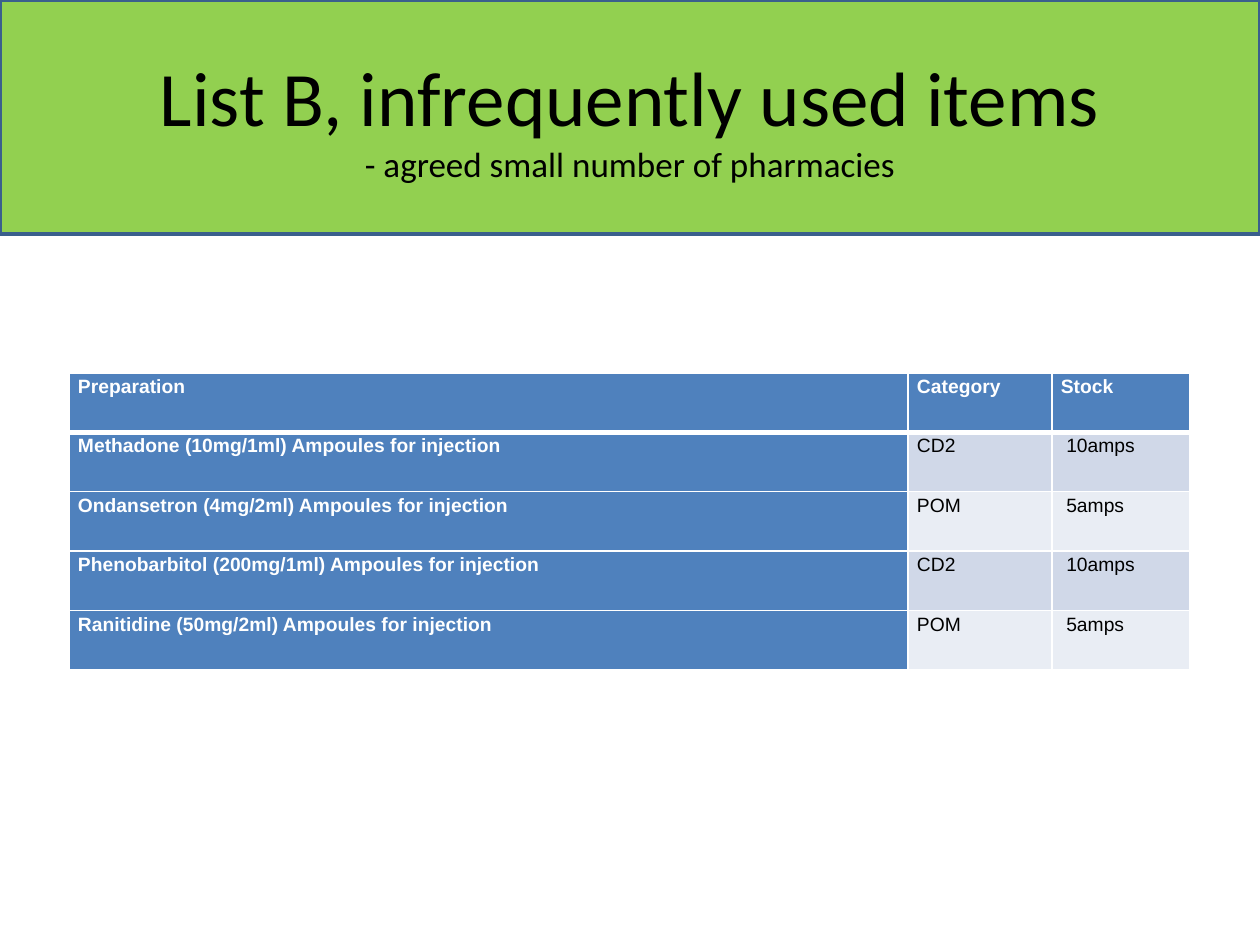
from dataclasses import dataclass

from lxml.etree import SubElement
from pptx import Presentation
from pptx.dml.color import RGBColor
from pptx.enum.text import MSO_ANCHOR, MSO_AUTO_SIZE, PP_ALIGN
from pptx.oxml.ns import qn
from pptx.util import Emu, Pt

EMU_PER_PX = 914400 / 126
TITLE_ONLY = 5


@dataclass(frozen=True)
class Theme:
    banner: str = "92D050"
    banner_line: str = "3A5F8C"
    heading: str = "4F81BD"
    bands: tuple = ("D0D8E8", "E9EDF4")
    light: str = "FFFFFF"
    dark: str = "000000"
    title_font: str = "Calibri"
    table_font: str = "Arial"
    title_size: int = 44
    subtitle_size: int = 20
    table_size: int = 11
    border: int = 1
    header_border: int = 3


THEME = Theme()

COLUMN_WIDTHS = (839, 144, 138)
ROWS = (
    ("Preparation", "Category", "Stock"),
    ("Methadone (10mg/1ml) Ampoules for injection", "CD2", " 10amps"),
    ("Ondansetron (4mg/2ml) Ampoules for injection", "POM", " 5amps"),
    ("Phenobarbitol (200mg/1ml) Ampoules for injection", "CD2", " 10amps"),
    ("Ranitidine (50mg/2ml) Ampoules for injection", "POM", " 5amps"),
)


def px(length):
    return Emu(round(length * EMU_PER_PX))


def write_text(paragraph, text, *, font, size, color, bold=False,
               align=PP_ALIGN.LEFT, line_spacing=1.0):
    paragraph.alignment = align
    paragraph.line_spacing = line_spacing
    run = paragraph.add_run()
    run.text = text
    run.font.name = font
    run.font.size = Pt(size)
    run.font.bold = bold
    run.font.color.rgb = RGBColor.from_string(color)


def fill_solid(target, color):
    target.fill.solid()
    target.fill.fore_color.rgb = RGBColor.from_string(color)


def add_banner(slide, title, subtitle):
    banner = slide.shapes.title
    banner.left, banner.top = px(0), px(0)
    banner.width, banner.height = px(1260), px(234)
    fill_solid(banner, THEME.banner)
    banner.line.color.rgb = RGBColor.from_string(THEME.banner_line)
    banner.line.width = Pt(2)
    frame = banner.text_frame
    frame.auto_size = MSO_AUTO_SIZE.NONE
    frame.vertical_anchor = MSO_ANCHOR.MIDDLE
    style = dict(font=THEME.title_font, color=THEME.dark, align=PP_ALIGN.CENTER)
    write_text(frame.paragraphs[0], title, size=THEME.title_size, **style)
    write_text(frame.add_paragraph(), subtitle, size=THEME.subtitle_size, **style)


def set_borders(cell, row_index):
    """Draw all four sides, thicker between the header and the first row."""
    widths = dict.fromkeys(("lnL", "lnR", "lnT", "lnB"), THEME.border)
    if row_index == 0:
        widths["lnB"] = THEME.header_border
    elif row_index == 1:
        widths["lnT"] = THEME.header_border
    properties = cell._tc.get_or_add_tcPr()
    for side, width in widths.items():
        line = SubElement(properties, qn(f"a:{side}"), w=str(Pt(width)))
        solid = SubElement(line, qn("a:solidFill"))
        SubElement(solid, qn("a:srgbClr"), val=THEME.light)


def format_cell(cell, text, row_index, column_index):
    is_heading = row_index == 0 or column_index == 0
    cell.margin_left = cell.margin_right = px(9)
    cell.margin_top = cell.margin_bottom = 0
    set_borders(cell, row_index)
    band = THEME.bands[(row_index - 1) % len(THEME.bands)]
    fill_solid(cell, THEME.heading if is_heading else band)
    write_text(cell.text_frame.paragraphs[0], text, font=THEME.table_font,
               size=THEME.table_size, bold=is_heading, line_spacing=1.15,
               color=THEME.light if is_heading else THEME.dark)


def add_stock_table(slide):
    table = slide.shapes.add_table(
        len(ROWS), len(COLUMN_WIDTHS),
        px(69), px(373), px(sum(COLUMN_WIDTHS)), px(297)).table
    table.first_col = True
    for column, width in zip(table.columns, COLUMN_WIDTHS):
        column.width = px(width)
    for row_index, row in enumerate(ROWS):
        for column_index, text in enumerate(row):
            format_cell(table.cell(row_index, column_index), text,
                        row_index, column_index)


def main():
    presentation = Presentation()
    presentation.slide_width, presentation.slide_height = px(1260), px(945)
    slide = presentation.slides.add_slide(presentation.slide_layouts[TITLE_ONLY])
    add_banner(slide, "List B, infrequently used items",
               "- agreed small number of pharmacies")
    add_stock_table(slide)
    presentation.save("out.pptx")


if __name__ == "__main__":
    main()
